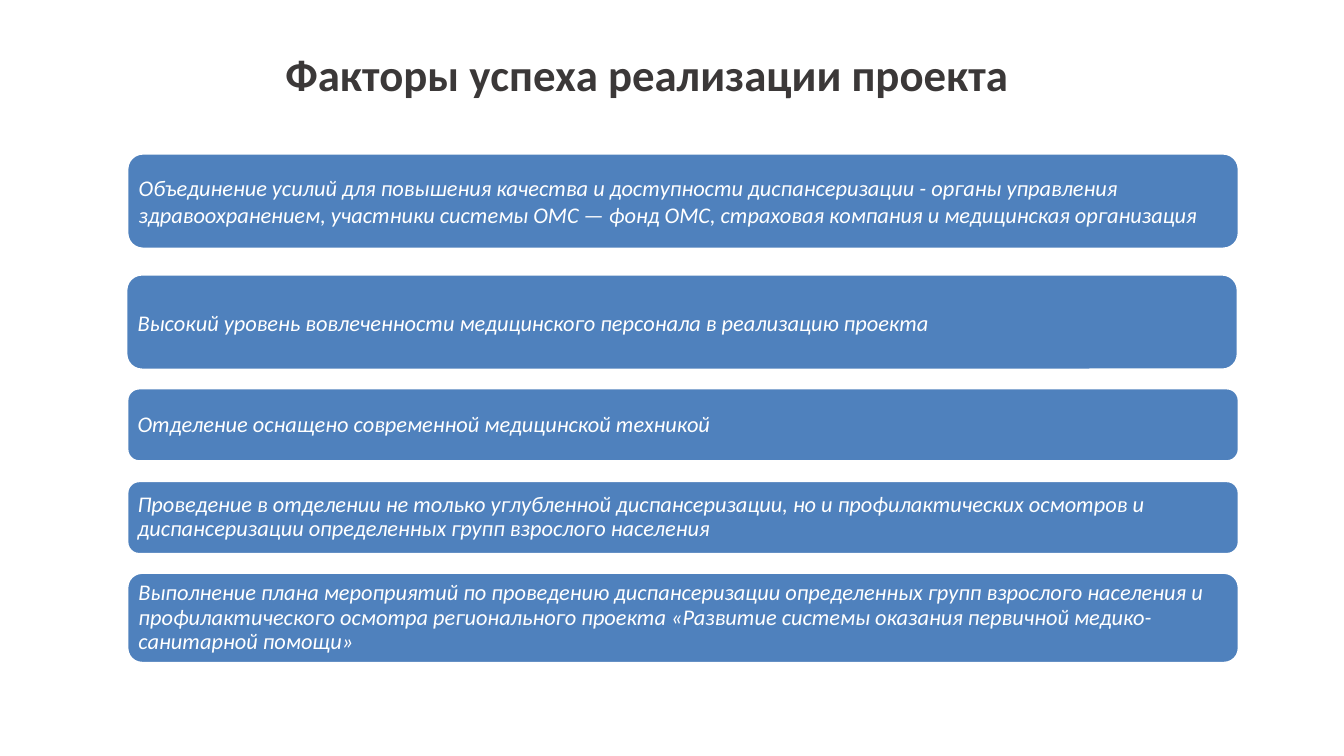
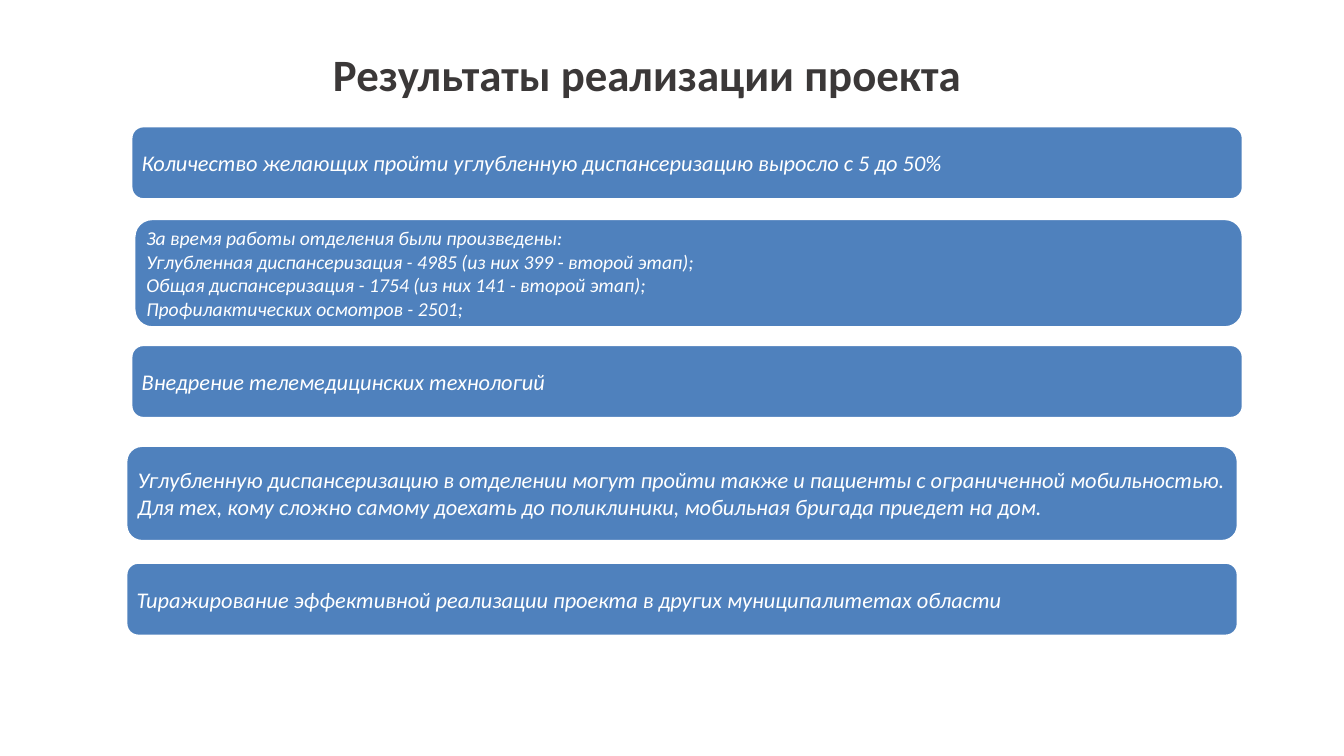
from pptx import Presentation
from pptx.dml.color import RGBColor
from pptx.enum.shapes import MSO_SHAPE
from pptx.enum.text import MSO_ANCHOR, PP_ALIGN
from pptx.util import Inches, Pt

COLORS = {"title": "3B3838", "band": "4F81BD", "white": "FFFFFF"}
FONT = "Calibri"
BAND_WIDTH = 11.03

# Each band: left, top, width, height, font size, line spacing, paragraphs
SLIDES = [
    ("Факторы успеха реализации проекта", [
        (1.26, 1.52, BAND_WIDTH, 0.95, 16, 1.0, [
            "Объединение усилий для повышения качества и доступности диспансеризации - "
            "органы управления здравоохранением, участники системы ОМС — фонд ОМС, "
            "страховая компания и медицинская организация"]),
        (1.25, 2.72, BAND_WIDTH, 0.95, 16, 1.0, [
            "Высокий уровень вовлеченности медицинского персонала в реализацию проекта"]),
        (1.26, 3.85, BAND_WIDTH, 0.73, 16, 0.9, [
            "Отделение оснащено современной медицинской техникой"]),
        (1.26, 4.77, BAND_WIDTH, 0.73, 16, 0.9, [
            "Проведение в отделении не только углубленной диспансеризации, но и "
            "профилактических осмотров и диспансеризации определенных групп "
            "взрослого населения"]),
        (1.26, 5.68, BAND_WIDTH, 0.9, 16, 0.9, [
            "Выполнение плана мероприятий по проведению диспансеризации определенных "
            "групп взрослого населения и профилактического осмотра регионального проекта "
            "«Развитие системы оказания первичной медико-санитарной помощи»"]),
    ]),
    ("Результаты реализации проекта", [
        (1.3, 1.25, BAND_WIDTH, 0.73, 16, 1.0, [
            "Количество желающих пройти углубленную диспансеризацию выросло с 5 до 50%"]),
        (1.33, 2.17, 11, 1.08, 14, 1.0, [
            "За время работы отделения были произведены:",
            "Углубленная диспансеризация - 4985 (из них 399 - второй этап);",
            "Общая диспансеризация - 1754 (из них 141 - второй этап);",
            "Профилактических осмотров - 2501;"]),
        (1.3, 3.42, BAND_WIDTH, 0.73, 16, 1.0, [
            "Внедрение телемедицинских технологий"]),
        (1.25, 4.42, BAND_WIDTH, 0.95, 16, 1.0, [
            "Углубленную диспансеризацию в отделении могут пройти также и пациенты "
            "с ограниченной мобильностью. Для тех, кому сложно самому доехать до "
            "поликлиники, мобильная бригада приедет на дом."]),
        (1.25, 5.58, BAND_WIDTH, 0.73, 16, 1.0, [
            "Тиражирование эффективной реализации проекта в других муниципалитетах области"]),
    ]),
]


def write_text(shape, paragraphs, *, size, color, bold=False, italic=False,
               align=PP_ALIGN.LEFT, anchor=MSO_ANCHOR.TOP, inset=0, spacing=1.0):
    frame = shape.text_frame
    frame.word_wrap = True
    frame.vertical_anchor = anchor
    frame.margin_left = frame.margin_right = Inches(inset)
    frame.margin_top = frame.margin_bottom = Inches(inset)
    for index, text in enumerate(paragraphs):
        paragraph = frame.add_paragraph() if index else frame.paragraphs[0]
        paragraph.alignment = align
        paragraph.line_spacing = spacing
        run = paragraph.add_run()
        run.text = text
        run.font.name = FONT
        run.font.size = Pt(size)
        run.font.bold = bold
        run.font.italic = italic
        run.font.color.rgb = RGBColor.from_string(COLORS[color])


presentation = Presentation()
presentation.slide_width = Inches(13.33)
presentation.slide_height = Inches(7.5)

for heading, bands in SLIDES:
    slide = presentation.slides.add_slide(presentation.slide_layouts[6])
    title = slide.shapes.add_textbox(Inches(1.92), Inches(0.46), Inches(9), Inches(0.54))
    write_text(title, [heading], size=32, color="title", bold=True, align=PP_ALIGN.CENTER)

    for left, top, width, height, size, spacing, paragraphs in bands:
        band = slide.shapes.add_shape(MSO_SHAPE.ROUNDED_RECTANGLE, Inches(left), Inches(top),
                                      Inches(width), Inches(height))
        band.shadow.inherit = False
        band.fill.solid()
        band.fill.fore_color.rgb = RGBColor.from_string(COLORS["band"])
        band.line.color.rgb = RGBColor.from_string(COLORS["white"])
        band.line.width = Pt(2)
        write_text(band, paragraphs, size=size, color="white", italic=True,
                   anchor=MSO_ANCHOR.MIDDLE, inset=0.07, spacing=spacing)

presentation.save("out.pptx")
